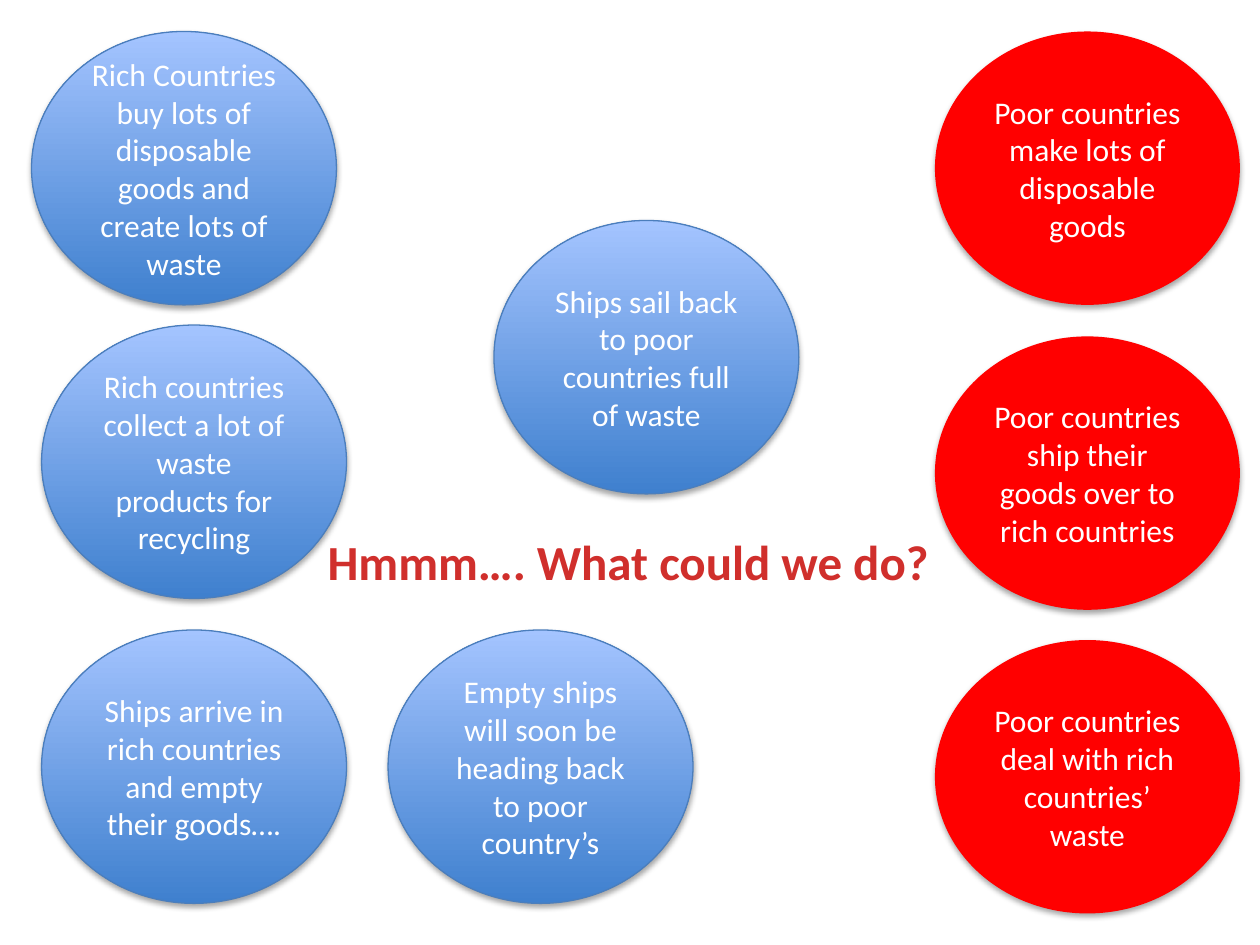
from lxml import etree
from pptx import Presentation
from pptx.dml.color import RGBColor
from pptx.enum.shapes import MSO_SHAPE
from pptx.enum.text import MSO_ANCHOR, MSO_AUTO_SIZE, PP_ALIGN
from pptx.oxml.ns import qn
from pptx.util import Inches, Pt

OVAL = MSO_SHAPE.OVAL
CENTER, LEFT = PP_ALIGN.CENTER, PP_ALIGN.LEFT
MIDDLE, TOP = MSO_ANCHOR.MIDDLE, MSO_ANCHOR.TOP

FONT = "Calibri"
CIRCLE_W, CIRCLE_H = 2.42, 2.17
POOR_LEFT = 7.42

QUESTION = "Hmmm…. What could we do?"
# (left, top, text)
RICH_AND_SHIPS = [
    (0.25, 0.25, "Rich Countries buy lots of disposable goods and create lots of waste"),
    (0.33, 2.58, "Rich countries collect a lot of waste products for recycling"),
    (0.33, 5.0, "Ships arrive in rich countries and empty their goods…."),
    (3.08, 5.0, "Empty ships will soon be heading back to poor country’s"),
    (3.92, 1.75, "Ships sail back to poor countries full of waste"),
]
# (top, text)
POOR = [
    (0.25, "Poor countries make lots of disposable goods"),
    (2.67, "Poor countries ship their goods over to rich countries"),
    (5.08, "Poor countries deal with rich countries’ waste"),
]


def rgb(value):
    return RGBColor.from_string(value)


def set_text(frame, text, size, color, align, anchor, bold=False):
    frame.text = text
    frame.vertical_anchor = anchor
    paragraph = frame.paragraphs[0]
    paragraph.alignment = align
    font = paragraph.runs[0].font
    font.name, font.size, font.bold = FONT, Pt(size), bold
    font.color.rgb = rgb(color)


def add_soft_shadow(shape):
    """Give the shape a soft shadow straight below it."""
    shape.shadow.inherit = False
    effects = shape._element.spPr.find(qn("a:effectLst"))
    shadow = etree.SubElement(
        effects, qn("a:outerShdw"), blurRad=str(Pt(3.1)), dist=str(Pt(1.8)),
        dir="5400000", rotWithShape="0")
    color = etree.SubElement(shadow, qn("a:srgbClr"), val="000000")
    etree.SubElement(color, qn("a:alpha"), val="35000")


def add_circle(slide, left, top, text):
    circle = slide.shapes.add_shape(
        OVAL, Inches(left), Inches(top), Inches(CIRCLE_W), Inches(CIRCLE_H))
    add_soft_shadow(circle)
    circle.text_frame.word_wrap = True
    set_text(circle.text_frame, text, 18, "FFFFFF", CENTER, MIDDLE)
    return circle


def add_blue_circle(slide, left, top, text):
    circle = add_circle(slide, left, top, text)
    circle.fill.gradient()
    circle.fill.gradient_angle = 90
    for stop, color in zip(circle.fill.gradient_stops, ("3F80CE", "A4C4FF")):
        stop.color.rgb = rgb(color)
    circle.line.color.rgb = rgb("4B7EBC")
    circle.line.width = Pt(0.75)


def add_red_circle(slide, left, top, text):
    circle = add_circle(slide, left, top, text)
    circle.fill.solid()
    circle.fill.fore_color.rgb = rgb("FF0000")
    circle.line.fill.background()


def main():
    prs = Presentation()
    prs.slide_width, prs.slide_height = Inches(10), Inches(7.5)
    slide = prs.slides.add_slide(prs.slide_layouts.get_by_name("Title Only"))

    for left, top, text in RICH_AND_SHIPS:
        add_blue_circle(slide, left, top, text)
    for top, text in POOR:
        add_red_circle(slide, POOR_LEFT, top, text)

    question = slide.shapes.title
    question.left, question.top = Inches(2.5), Inches(4.17)
    question.width, question.height = Inches(5.03), Inches(0.57)
    question.text_frame.word_wrap = False
    question.text_frame.auto_size = MSO_AUTO_SIZE.SHAPE_TO_FIT_TEXT
    set_text(question.text_frame, QUESTION, 28, "D02F2C", LEFT, TOP, bold=True)

    prs.save("out.pptx")


if __name__ == "__main__":
    main()
